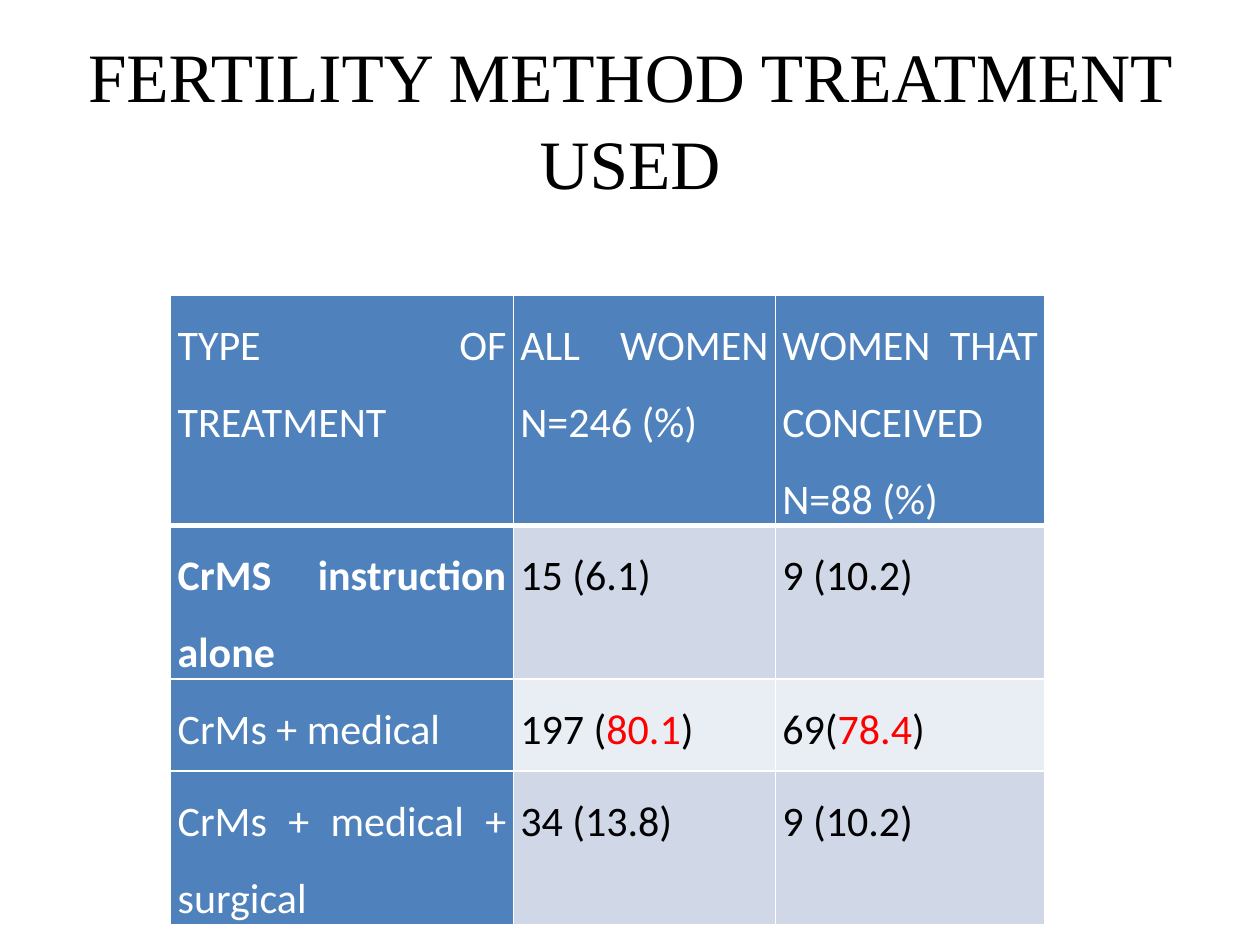
"""Build a slide with a table of the treatments used."""
import pptx
import pptx.dml.color
import pptx.enum.text
import pptx.oxml
import pptx.oxml.ns
import pptx.util

Pt = pptx.util.Pt
ALIGN = pptx.enum.text.PP_ALIGN
COLORS = {
    "black": "000000",
    "white": "FFFFFF",
    "red": "FF0000",
    "blue": "4F81BD",
    "dark band": "D0D8E8",
    "light band": "E9EDF4",
}


def add_text(paragraph, text, *, font, size, color, align, spacing, bold=False):
    paragraph.alignment = align
    paragraph.line_spacing = spacing
    run = paragraph.add_run()
    run.text = text
    run.font.name = font
    run.font.size = Pt(size)
    run.font.bold = bold
    run.font.color.rgb = pptx.dml.color.RGBColor.from_string(COLORS[color])


def set_border(cell, side, width):
    line = pptx.oxml.parse_xml(
        f'<a:{side} {pptx.oxml.ns.nsdecls("a")} w="{Pt(width)}"><a:solidFill>'
        f'<a:srgbClr val="{COLORS["white"]}"/></a:solidFill></a:{side}>'
    )
    cell._tc.get_or_add_tcPr().append(line)


presentation = pptx.Presentation()
presentation.slide_width = Pt(720)
presentation.slide_height = Pt(540)
slide = presentation.slides.add_slide(presentation.slide_layouts[5])

title = slide.shapes.title
title.left, title.top, title.width, title.height = Pt(36), Pt(21.6), Pt(648), Pt(90)
title.text_frame.word_wrap = True
title.text_frame.auto_size = pptx.enum.text.MSO_AUTO_SIZE.NONE
title.text_frame.vertical_anchor = pptx.enum.text.MSO_ANCHOR.MIDDLE
add_text(title.text_frame.paragraphs[0], "FERTILITY METHOD TREATMENT USED",
         font="Times New Roman", size=39.6, color="black",
         align=ALIGN.CENTER, spacing=1.04)

rows = [
    [["TYPE OF TREATMENT"], ["ALL WOMEN N=246 (%)"], ["WOMEN THAT CONCEIVED N=88 (%)"]],
    [["CrMS instruction alone"], ["15 (6.1)"], ["9 (10.2)"]],
    [["CrMs + medical"], ["197 (", "80.1", ")"], ["69(", "78.4", ")"]],
    [["CrMs + medical + surgical"], ["34 (13.8)"], ["9 (10.2)"]],
]
column_widths = [195.84, 149.76, 154.08]
row_heights = [110.88, 67.68, 52.56, 52.56]
table = slide.shapes.add_table(
    len(rows), len(column_widths), Pt(97.5), Pt(168.5),
    Pt(sum(column_widths)), Pt(sum(row_heights)),
).table
for column, width in zip(table.columns, column_widths):
    column.width = Pt(width)
for row, height in zip(table.rows, row_heights):
    row.height = Pt(height)

for row_index, row_texts in enumerate(rows):
    for column_index, parts in enumerate(row_texts):
        cell = table.cell(row_index, column_index)
        cell.margin_left = cell.margin_right = Pt(4)
        cell.margin_top = cell.margin_bottom = 0
        is_heading = row_index == 0 or column_index == 0
        for side in ("lnL", "lnR", "lnT", "lnB"):
            set_border(cell, side, 3 if row_index == 0 and side == "lnB" else 1)
        band = "dark band" if row_index % 2 else "light band"
        cell.fill.solid()
        cell.fill.fore_color.rgb = pptx.dml.color.RGBColor.from_string(
            COLORS["blue" if is_heading else band])
        for part_index, part in enumerate(parts):
            color = "white" if is_heading else "red" if part_index == 1 else "black"
            add_text(cell.text_frame.paragraphs[0], part,
                     font="Calibri", size=24, color=color,
                     align=ALIGN.JUSTIFY, spacing=1.5,
                     bold=(row_index, column_index) == (1, 0))

presentation.save("out.pptx")
